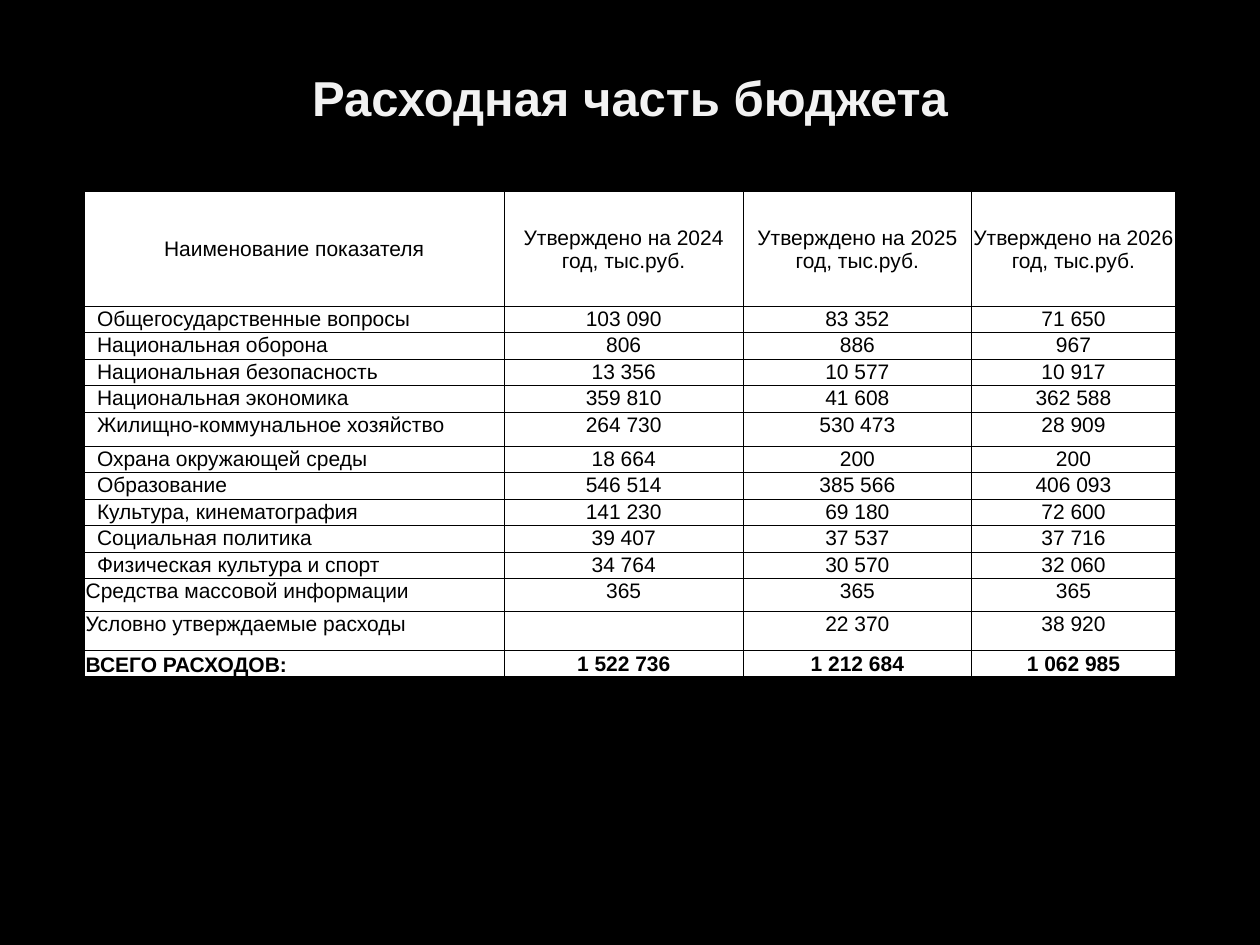
from dataclasses import dataclass

from lxml.etree import SubElement
from pptx import Presentation
from pptx.dml.color import RGBColor
from pptx.enum.text import MSO_ANCHOR as Anchor, PP_ALIGN as Align
from pptx.oxml.ns import qn
from pptx.slide import Slide
from pptx.table import _Cell as Cell
from pptx.text.text import _Paragraph as Paragraph
from pptx.util import Inches, Pt

COLORS = {"background": "000000", "title": "F2F2F2", "cell": "FFFFFF", "ink": "000000"}
FONT = "Arial"
COLUMN_WIDTHS = (3.33, 1.9, 1.81, 1.62)
CELL_MARGIN = 0.01
SECTION_INDENT = 0.1
BORDER_WIDTH = Pt(0.5)


@dataclass(frozen=True)
class BudgetRow:
    label: str
    amounts: tuple[str, ...]
    height: float = 0.21
    indent: float = SECTION_INDENT
    label_align: Align = Align.LEFT
    label_anchor: Anchor = Anchor.TOP
    amount_anchor: Anchor = Anchor.TOP
    bold: bool = False


BUDGET = (
    BudgetRow(
        "Наименование показателя",
        tuple(f"Утверждено на {year} год, тыс.руб." for year in (2024, 2025, 2026)),
        height=0.91,
        indent=CELL_MARGIN,
        label_align=Align.CENTER,
        label_anchor=Anchor.MIDDLE,
        amount_anchor=Anchor.MIDDLE,
    ),
    BudgetRow("Общегосударственные вопросы", ("103 090", "83 352", "71 650")),
    BudgetRow("Национальная оборона", ("806", "886", "967")),
    BudgetRow("Национальная безопасность", ("13 356", "10 577", "10 917")),
    BudgetRow("Национальная экономика", ("359 810", "41 608", "362 588")),
    BudgetRow("Жилищно-коммунальное хозяйство", ("264 730", "530 473", "28 909"), height=0.27),
    BudgetRow("Охрана окружающей среды", ("18 664", "200", "200")),
    BudgetRow("Образование", ("546 514", "385 566", "406 093")),
    BudgetRow("Культура, кинематография", ("141 230", "69 180", "72 600")),
    BudgetRow("Социальная политика", ("39 407", "37 537", "37 716")),
    BudgetRow("Физическая культура и спорт", ("34 764", "30 570", "32 060")),
    BudgetRow("Средства массовой информации", ("365", "365", "365"), height=0.26, indent=CELL_MARGIN),
    BudgetRow("Условно утверждаемые расходы", ("", "22 370", "38 920"), height=0.31, indent=CELL_MARGIN),
    BudgetRow(
        "ВСЕГО РАСХОДОВ:",
        ("1 522 736", "1 212 684", "1 062 985"),
        indent=CELL_MARGIN,
        label_anchor=Anchor.BOTTOM,
        amount_anchor=Anchor.MIDDLE,
        bold=True,
    ),
)


def add_run(paragraph: Paragraph, text: str, size: float, color: str, bold: bool) -> None:
    run = paragraph.add_run()
    run.text = text
    run.font.name = FONT
    run.font.size = Pt(size)
    run.font.bold = bold
    run.font.color.rgb = RGBColor.from_string(COLORS[color])


def add_borders(cell: Cell) -> None:
    properties = cell._tc.get_or_add_tcPr()
    for position, side in enumerate(("a:lnL", "a:lnR", "a:lnT", "a:lnB")):
        border = properties.makeelement(qn(side), {"w": str(BORDER_WIDTH)})
        properties.insert(position, border)
        fill = SubElement(border, qn("a:solidFill"))
        SubElement(fill, qn("a:srgbClr"), val=COLORS["ink"])


def fill_cell(cell: Cell, text: str, align: Align, anchor: Anchor, indent: float, bold: bool) -> None:
    cell.margin_left = Inches(indent)
    cell.margin_right = cell.margin_top = Inches(CELL_MARGIN)
    cell.margin_bottom = 0
    cell.vertical_anchor = anchor
    cell.fill.solid()
    cell.fill.fore_color.rgb = RGBColor.from_string(COLORS["cell"])
    add_borders(cell)
    paragraph = cell.text_frame.paragraphs[0]
    paragraph.alignment = align
    add_run(paragraph, text, 12, "ink", bold)


def add_title(slide: Slide) -> None:
    title = slide.shapes.add_textbox(Inches(0.5), Inches(0.29), Inches(9), Inches(0.96)).text_frame
    title.word_wrap = True
    title.vertical_anchor = Anchor.MIDDLE
    heading = title.paragraphs[0]
    heading.alignment = Align.CENTER
    add_run(heading, "Расходная часть бюджета", 28, "title", True)


def add_budget_table(slide: Slide) -> None:
    budget = slide.shapes.add_table(
        len(BUDGET), len(COLUMN_WIDTHS), Inches(0.67), Inches(1.52),
        Inches(sum(COLUMN_WIDTHS)), Inches(sum(row.height for row in BUDGET)),
    ).table
    budget.horz_banding = False
    budget.first_row = False
    for column, width in zip(budget.columns, COLUMN_WIDTHS):
        column.width = Inches(width)
    for index, row in enumerate(BUDGET):
        budget.rows[index].height = Inches(row.height)
        fill_cell(budget.cell(index, 0), row.label, row.label_align, row.label_anchor, row.indent, row.bold)
        for year, amount in enumerate(row.amounts, start=1):
            fill_cell(budget.cell(index, year), amount, Align.CENTER, row.amount_anchor, CELL_MARGIN, row.bold)


def main() -> None:
    presentation = Presentation()
    presentation.slide_width = Inches(10)
    presentation.slide_height = Inches(7.5)
    slide = presentation.slides.add_slide(presentation.slide_layouts[6])
    slide.background.fill.solid()
    slide.background.fill.fore_color.rgb = RGBColor.from_string(COLORS["background"])
    add_title(slide)
    add_budget_table(slide)
    presentation.save("out.pptx")


if __name__ == "__main__":
    main()
